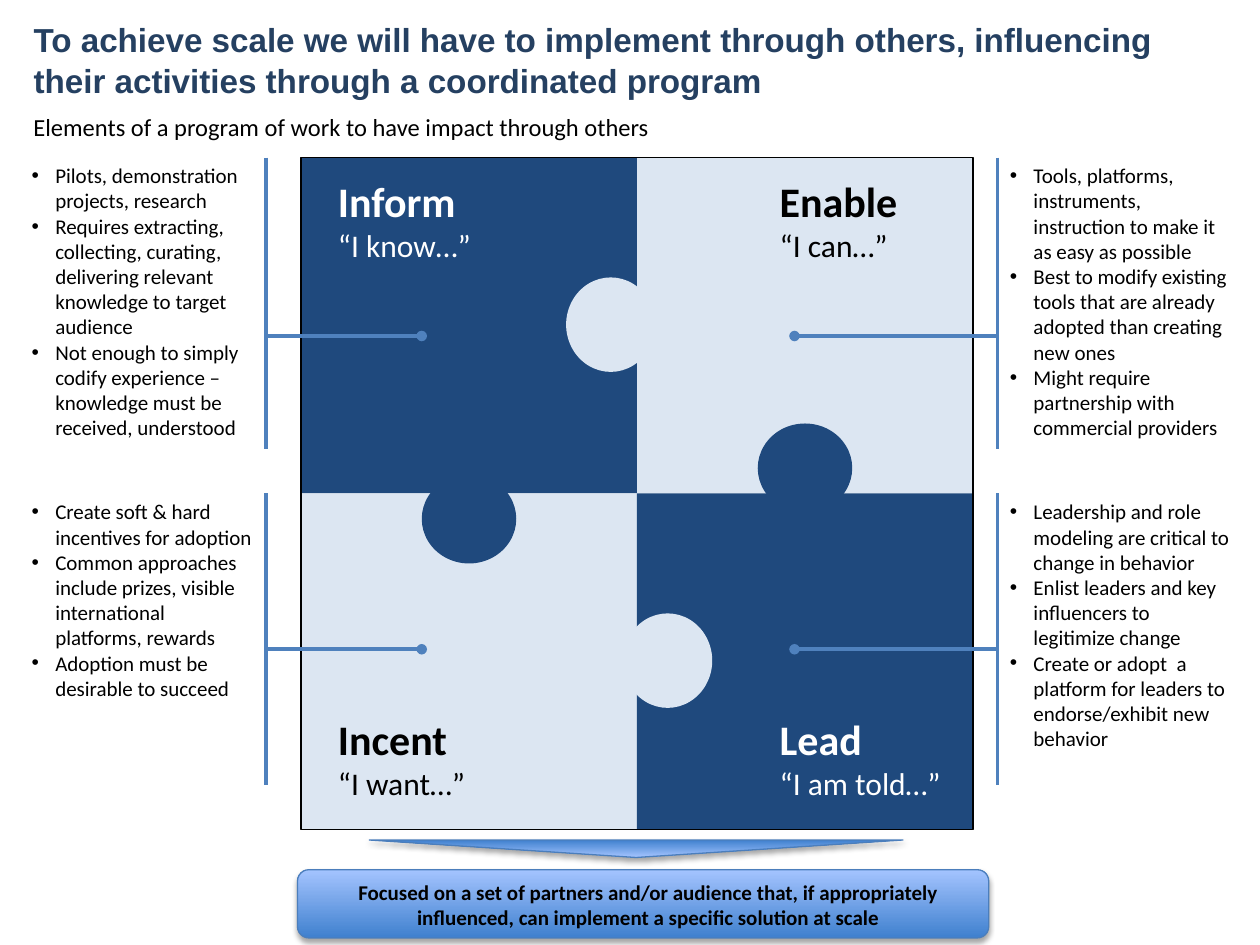
"""Build a slide with a four-part puzzle of ways to work through others."""
from lxml.etree import SubElement
from pptx import Presentation
from pptx.dml.color import RGBColor
from pptx.enum.shapes import MSO_CONNECTOR, MSO_SHAPE
from pptx.enum.text import MSO_ANCHOR, MSO_AUTO_SIZE, PP_ALIGN
from pptx.oxml.ns import qn
from pptx.util import Pt


class Theme:
    title = RGBColor.from_string("254061")
    dark = RGBColor.from_string("1F497D")
    light = RGBColor.from_string("DCE6F2")
    line = RGBColor.from_string("4F81BD")
    edge = RGBColor.from_string("4B7EBC")
    low = RGBColor.from_string("3F80CE")
    high = RGBColor.from_string("A4C4FF")
    black = RGBColor(0, 0, 0)
    white = RGBColor(255, 255, 255)
    head_font, body_font = "Arial", "Calibri"
    head_size, sub_size, name_size, quote_size, note_size = 19, 14, 24, 18, 12


def add_text(shapes, box, lines, size, color=Theme.black, bold=False, wrap=True, bullet=False):
    frame = shapes.add_textbox(*map(Pt, box)).text_frame
    frame.word_wrap = wrap
    frame.auto_size = MSO_AUTO_SIZE.SHAPE_TO_FIT_TEXT
    frame.text = "\n".join(lines)
    for para in frame.paragraphs:
        if bullet:
            props = para._p.get_or_add_pPr()
            props.set("marL", str(Pt(13.5)))
            props.set("indent", str(-Pt(13.5)))
            SubElement(props, qn("a:buFont")).set("typeface", "Arial")
            SubElement(props, qn("a:buChar")).set("char", "•")
        font = para.runs[0].font
        font.name, font.size, font.bold = Theme.body_font, Pt(size), bold
        font.color.rgb = color
    return frame


def add_line(shapes, x1, y1, x2, y2, dot=False):
    line = shapes.add_connector(MSO_CONNECTOR.STRAIGHT, Pt(x1), Pt(y1), Pt(x2), Pt(y2))
    line.line.color.rgb = Theme.line
    line.line.width = Pt(2)
    props = line._element.spPr
    if dot:
        SubElement(props.find(qn("a:ln")), qn("a:tailEnd")).set("type", "oval")
    SubElement(props, qn("a:effectLst"))


deck = Presentation()
deck.slide_width, deck.slide_height = Pt(720), Pt(540)
slide = deck.slides.add_slide(deck.slide_layouts[5])
shapes = slide.shapes

title = shapes.title
title.left, title.top, title.width, title.height = Pt(12), Pt(6), Pt(693), Pt(53)
frame = title.text_frame
frame.text = ("To achieve scale we will have to implement through others, "
              "influencing their activities through a coordinated program")
frame.vertical_anchor = MSO_ANCHOR.TOP
frame.auto_size = MSO_AUTO_SIZE.NONE
para = frame.paragraphs[0]
para.alignment = PP_ALIGN.LEFT
para.line_spacing = 1.05
font = para.runs[0].font
font.name, font.size, font.bold = Theme.head_font, Pt(Theme.head_size), True
font.color.rgb = Theme.title

add_text(shapes, (12, 60.5, 371, 24),
         ["Elements of a program of work to have impact through others"], Theme.sub_size)

left, top, side = 172, 90, 192
mid_x, mid_y = left + side, top + side
puzzle = shapes.add_group_shape().shapes
pieces = [
    (MSO_SHAPE.RECTANGLE, mid_x, top, side, side, Theme.light),
    (MSO_SHAPE.RECTANGLE, left, top, side, side, Theme.dark),
    (MSO_SHAPE.RECTANGLE, left, mid_y, side, side, Theme.light),
    (MSO_SHAPE.RECTANGLE, mid_x, mid_y, side, side, Theme.dark),
    (MSO_SHAPE.OVAL, 433, 242, 54, 51, Theme.dark),
    (MSO_SHAPE.OVAL, 323.5, 158.5, 51, 54, Theme.light),
    (MSO_SHAPE.OVAL, 241, 271, 54, 51, Theme.dark),
    (MSO_SHAPE.OVAL, 356, 350.5, 51, 54, Theme.light),
    (MSO_SHAPE.RECTANGLE, left, top, 2 * side, 2 * side, None),
]
for kind, x, y, wide, high, color in pieces:
    piece = puzzle.add_shape(kind, Pt(x), Pt(y), Pt(wide), Pt(high))
    piece.shadow.inherit = False
    if color is None:
        piece.fill.background()
        piece.line.color.rgb = Theme.black
        piece.line.width = Pt(0.75)
    else:
        piece.fill.solid()
        piece.fill.fore_color.rgb = color
        piece.line.fill.background()

parts = [
    (0, 0, "Inform", "“I know…”", 91.5, Theme.white, [
        "Pilots, demonstration projects, research",
        "Requires extracting, collecting, curating, delivering relevant knowledge to target audience",
        "Not enough to simply codify experience – knowledge must be received, understood"]),
    (1, 0, "Enable", "“I can…”", 83, Theme.black, [
        "Tools, platforms, instruments, instruction to make it as easy as possible",
        "Best to modify existing tools that are already adopted than creating new ones",
        "Might require partnership with commercial providers"]),
    (0, 1, "Incent", "“I want…”", 88.5, Theme.black, [
        "Create soft & hard incentives for adoption",
        "Common approaches include prizes, visible international platforms, rewards",
        "Adoption must be desirable to succeed"]),
    (1, 1, "Lead", "“I am told…”", 108, Theme.white, [
        "Leadership and role modeling are critical to change in behavior",
        "Enlist leaders and key influencers to legitimize change",
        "Create or adopt  a platform for leaders to endorse/exhibit new behavior"]),
]
for col, row, name, quote, wide, color, notes in parts:
    label = add_text(puzzle, ((186, 438.5)[col], (97, 404)[row], wide, 58), [name, quote],
                     Theme.quote_size, color, wrap=False)
    head = label.paragraphs[0].runs[0].font
    head.size, head.bold = Pt(Theme.name_size), True
    bar, dot = (152, 570)[col], (241, 454)[col]
    link, start = (192, 371)[row], top + row * side
    add_line(shapes, bar, link, dot, link, dot=True)
    add_line(shapes, bar, start, bar, start + 166.5)
    add_text(shapes, ((11, 570)[col], start - 0.5, 142, 167), notes, Theme.note_size, bullet=True)

for kind, box, turn in [(MSO_SHAPE.ISOSCELES_TRIANGLE, (211, 480, 305, 10), 180),
                        (MSO_SHAPE.ROUNDED_RECTANGLE, (170, 497, 395, 39), 0)]:
    shape = shapes.add_shape(kind, *map(Pt, box))
    shape.rotation = turn
    shape.fill.gradient()
    shape.fill.gradient_angle = 90
    for stop, color in zip(shape.fill.gradient_stops, (Theme.low, Theme.high)):
        stop.color.rgb = color
    shape.line.color.rgb = Theme.edge
    shape.line.width = Pt(0.75)
    shape.shadow.inherit = False
    shadow = SubElement(shape._element.spPr.find(qn("a:effectLst")), qn("a:outerShdw"),
                        blurRad=str(Pt(3.1)), dist=str(Pt(1.8)), dir="5400000", rotWithShape="0")
    tint = SubElement(shadow, qn("a:srgbClr"), val=str(Theme.black))
    SubElement(tint, qn("a:alpha"), val="35000")

focus = add_text(shapes, (185, 499, 371, 36),
                 ["Focused on a set of partners and/or audience that, if appropriately "
                  "influenced, can implement a specific solution at scale"],
                 Theme.note_size, bold=True)
focus.paragraphs[0].alignment = PP_ALIGN.CENTER

deck.save("out.pptx")
